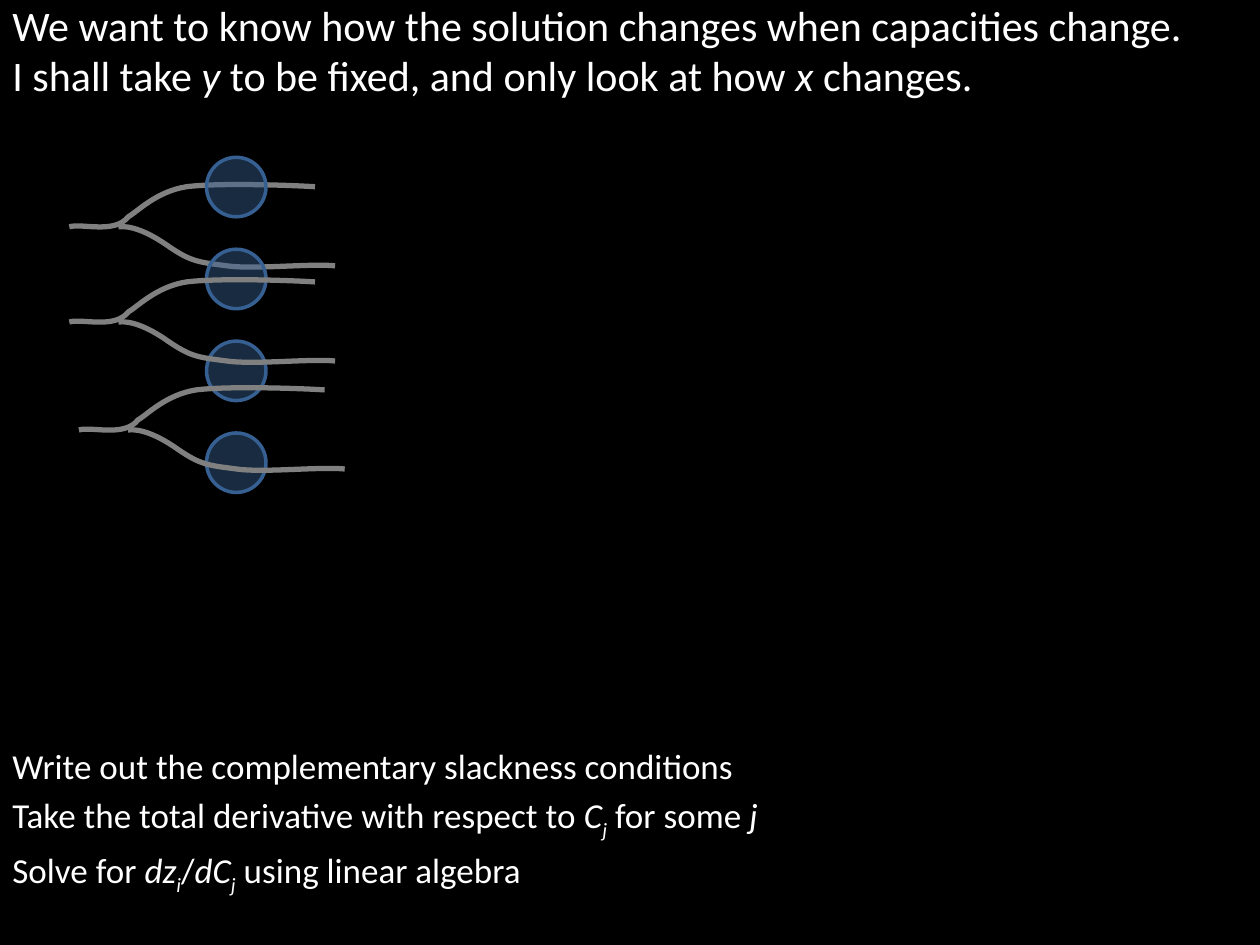
"""Build a slide on how a network solution reacts to capacity changes."""
from lxml.etree import SubElement
from pptx import Presentation
from pptx.dml.color import RGBColor
from pptx.enum.shapes import MSO_SHAPE
from pptx.enum.text import MSO_ANCHOR
from pptx.oxml.ns import qn
from pptx.util import Pt

BLACK = RGBColor(0x00, 0x00, 0x00)
WHITE = RGBColor(0xFF, 0xFF, 0xFF)
GREY = RGBColor(0x80, 0x80, 0x80)
BLUE = RGBColor(0x37, 0x60, 0x92)

UPPER = [(39.6, 129.6), (46.8, 127.4), (65.5, 133.9), (73.4, 123.8),
         (78.5, 121), (89.3, 109.4), (106.6, 106.7),
         (124.6, 104.4), (165.6, 105.8), (180, 106.7)]
LOWER = [(67.7, 129.6), (74.2, 128.9), (83.5, 131.8), (95.8, 140.4),
         (109.4, 149.8), (113.8, 149.8), (129.6, 151.9),
         (145.4, 154.1), (176.4, 150.5), (191.5, 151.9)]
FORKS = [(0, 0), (0, 54.4), (5.5, 116.1)]

TITLE = [
    [("We want to know how the solution changes when capacities change. ", ""),
     ("\n", ""), ("I shall take ", ""), ("y", "i"),
     (" to be fixed, and only look at how ", ""), ("x", "i"),
     (" changes.", "")],
]
STEPS = [
    [("Write out the complementary slackness conditions", "")],
    [("Take the total derivative with respect to ", ""), ("C", "i"),
     ("j", "is"), (" for some ", ""), ("j", "i")],
    [("Solve for ", ""), ("dz", "i"), ("i", "is"), ("/", ""), ("dC", "i"),
     ("j", "is"), (" using linear algebra", "")],
]


class Deck:
    font = "Calibri"

    def __init__(self, wide, high):
        self.prs = Presentation()
        self.prs.slide_width, self.prs.slide_height = Pt(wide), Pt(high)
        self.slide = self.prs.slides.add_slide(self.prs.slide_layouts[6])
        fill = self.slide.background.fill
        fill.solid()
        fill.fore_color.rgb = BLACK

    def text(self, box, paras, size, gap=0, anchor=MSO_ANCHOR.TOP):
        frame = self.slide.shapes.add_textbox(*map(Pt, box)).text_frame
        frame.word_wrap = True
        frame.vertical_anchor = anchor
        for n, runs in enumerate(paras):
            para = frame.add_paragraph() if n else frame.paragraphs[0]
            para.space_before = Pt(gap)
            for words, style in runs:
                if words == "\n":
                    para.add_line_break()
                    continue
                run = para.add_run()
                run.text = words
                run.font.name = self.font
                run.font.size = Pt(size)
                run.font.color.rgb = WHITE
                run.font.italic = "i" in style
                if "s" in style:
                    run._r.get_or_add_rPr().set("baseline", "-25000")

    def group(self):
        self.net = self.slide.shapes.add_group_shape().shapes

    def curve(self, nodes, shift):
        dots = [(Pt(x + shift[0]), Pt(y + shift[1])) for x, y in nodes]
        pen = self.net.build_freeform(*dots[0])
        pen.add_line_segments(dots[1:], close=False)
        shape = pen.convert_to_shape()
        track = next(shape._element.iter(qn("a:path")))
        lines = track.findall(qn("a:lnTo"))
        for n in range(0, len(lines), 3):
            bend = SubElement(track, qn("a:cubicBezTo"))
            for line in lines[n:n + 3]:
                bend.append(line[0])
                track.remove(line)
        shape.shadow.inherit = False
        shape.fill.background()
        shape.line.color.rgb = GREY
        shape.line.width = Pt(3)

    def fork(self, shift):
        for nodes in (UPPER, LOWER):
            self.curve(nodes, shift)

    def disc(self, left, top, size):
        shape = self.net.add_shape(
            MSO_SHAPE.OVAL, Pt(left), Pt(top), Pt(size), Pt(size))
        shape.shadow.inherit = False
        shape.fill.solid()
        shape.fill.fore_color.rgb = BLUE
        tint = shape.fill._xPr.find(qn("a:solidFill"))[0]
        SubElement(tint, qn("a:alpha")).set("val", "45000")
        shape.line.color.rgb = BLUE
        shape.line.width = Pt(2)


def main():
    deck = Deck(720, 540)
    deck.text((0, 422, 720, 118), STEPS, 20, gap=4)
    deck.group()
    deck.fork(FORKS[0])
    for n in range(4):
        deck.disc(118, 89.9 + 52.5 * n, 34)
    for shift in FORKS[1:]:
        deck.fork(shift)
    deck.text((0, 0, 720, 56.5), TITLE, 24, anchor=MSO_ANCHOR.MIDDLE)
    deck.prs.save("out.pptx")


if __name__ == "__main__":
    main()
